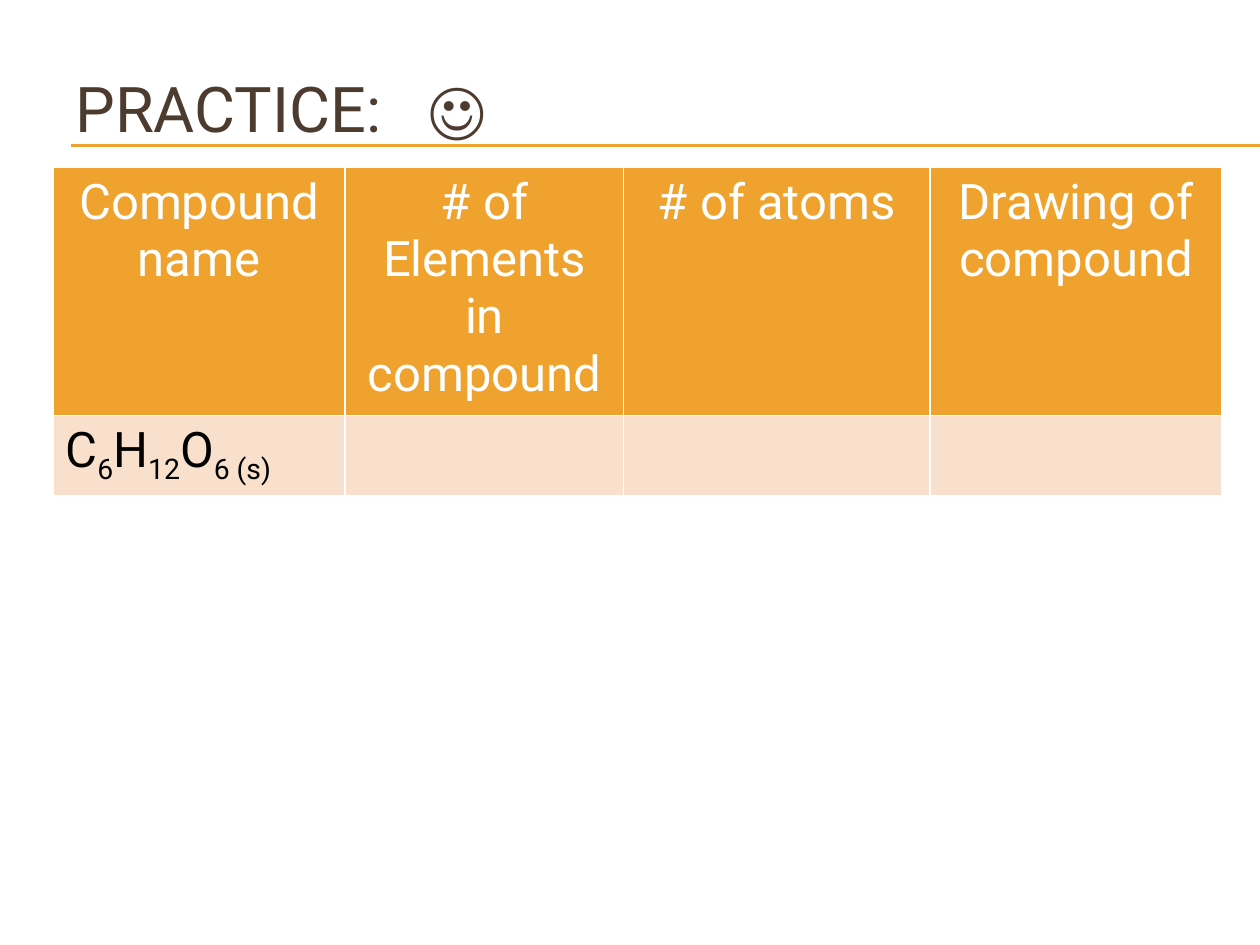
from lxml.etree import SubElement
from pptx import Presentation
from pptx.dml.color import RGBColor
from pptx.enum.shapes import MSO_CONNECTOR as Connector
from pptx.enum.text import MSO_ANCHOR as Anchor, PP_ALIGN as Align
from pptx.oxml.ns import qn
from pptx.util import Inches, Pt

ORANGE = RGBColor(0xF0, 0xA2, 0x2E)
PEACH = RGBColor(0xF9, 0xE0, 0xCD)
BROWN = RGBColor(0x4E, 0x3B, 0x30)
WHITE = RGBColor(0xFF, 0xFF, 0xFF)
BLACK = RGBColor(0x00, 0x00, 0x00)
FONT = "Roboto"
SUBSCRIPT = -25000

HEADERS = ["Compound name", "# of Elements in compound", "# of atoms",
           "Drawing of compound"]
FORMULA = [("C", 0), ("6", SUBSCRIPT), ("H", 0), ("12", SUBSCRIPT),
           ("O", 0), ("6 (s)", SUBSCRIPT)]
COLUMN_WIDTHS = [2.32, 2.21, 2.43, 2.32]
ROW_HEIGHTS = [1.7, 0.64]


def write(paragraph, text, size=28, color=BLACK, align=Align.LEFT, baseline=0):
    paragraph.alignment = align
    run = paragraph.add_run()
    run.text = text
    run.font.name = FONT
    run.font.size = Pt(size)
    run.font.color.rgb = color
    if baseline:
        run.font._element.set("baseline", str(baseline))


def add_title(slide, left, top, width, height):
    frame = slide.shapes.add_textbox(left, top, width, height).text_frame
    frame.word_wrap = True
    frame.vertical_anchor = Anchor.MIDDLE
    heading = frame.paragraphs[0]
    write(heading, "PRACTICE:\t☺", size=36, color=BROWN)
    tabs = SubElement(heading._p.get_or_add_pPr(), qn("a:tabLst"))
    SubElement(tabs, qn("a:tab"), pos=str(Inches(2.8)), algn="l")


def add_double_rule(slide, left, top, width, gap):
    for y in (top, top + gap):
        rule = slide.shapes.add_connector(Connector.STRAIGHT, left, y, left + width, y)
        rule.line.color.rgb = ORANGE
        rule.line.width = Pt(0.75)
        SubElement(rule._element.spPr, qn("a:effectLst"))


def style_cell(cell, fill):
    """Fill the cell and give it thin white borders."""
    properties = cell._tc.get_or_add_tcPr()
    for side in "LRTB":
        border = SubElement(properties, qn(f"a:ln{side}"), w=str(Pt(1)))
        solid = SubElement(border, qn("a:solidFill"))
        SubElement(solid, qn("a:srgbClr"), val=str(WHITE))
    cell.fill.solid()
    cell.fill.fore_color.rgb = fill


def add_compound_table(slide, left, top, width, height):
    table = slide.shapes.add_table(len(ROW_HEIGHTS), len(HEADERS),
                                   left, top, width, height).table
    for column, column_width in zip(table.columns, COLUMN_WIDTHS):
        column.width = Inches(column_width)
    for row, row_height in zip(table.rows, ROW_HEIGHTS):
        row.height = Inches(row_height)

    for index, header in enumerate(HEADERS):
        header_cell, answer_cell = table.cell(0, index), table.cell(1, index)
        style_cell(header_cell, ORANGE)
        style_cell(answer_cell, PEACH)
        write(header_cell.text_frame.paragraphs[0], header, color=WHITE,
              align=Align.CENTER)

    formula_line = table.cell(1, 0).text_frame.paragraphs[0]
    for symbol, baseline in FORMULA:
        write(formula_line, symbol, baseline=baseline)


def main():
    deck = Presentation()
    deck.slide_width, deck.slide_height = Inches(10), Inches(7.5)
    slide = deck.slides.add_slide(deck.slide_layouts[6])
    add_double_rule(slide, Inches(0.56), Inches(1.15), Inches(9.44), Inches(0.01))
    add_title(slide, Inches(0.5), Inches(0.17), Inches(9), Inches(1.37))
    add_compound_table(slide, Inches(0.42), Inches(1.33),
                       Inches(sum(COLUMN_WIDTHS)), Inches(sum(ROW_HEIGHTS)))
    deck.save("out.pptx")


if __name__ == "__main__":
    main()
